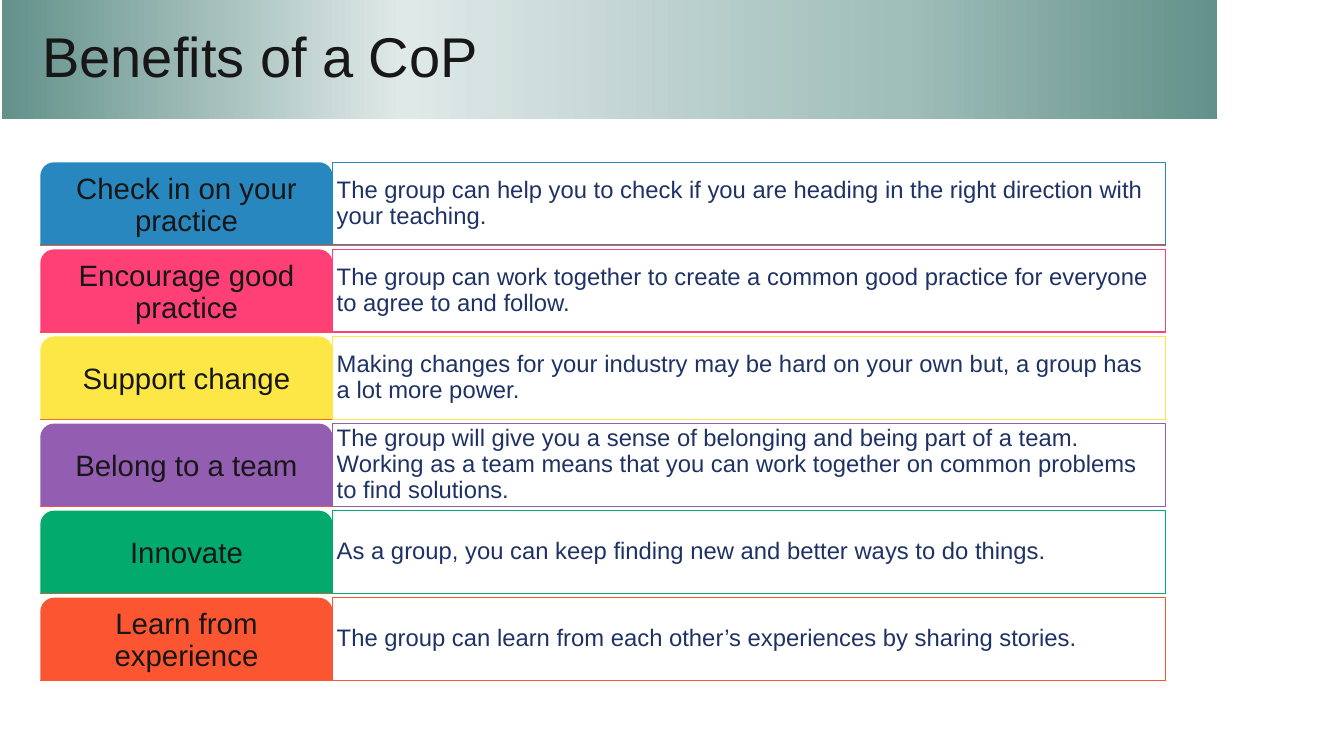
from dataclasses import dataclass
from lxml.etree import SubElement
from pptx import Presentation
from pptx.dml.color import RGBColor as Rgb
from pptx.enum.shapes import MSO_CONNECTOR as Link, MSO_SHAPE as Kind
from pptx.enum.text import MSO_ANCHOR as Anchor, PP_ALIGN as Align
from pptx.oxml.ns import qn
from pptx.util import Emu, Pt

PX = 9144  # 100 px to the inch


@dataclass(frozen=True)
class Theme:
    font: str = "Arial"
    ink: str = "171717"
    navy: str = "1E3265"
    rule: str = "FC5531"
    bar: tuple = ((0, "63918B"), (33, "DFE9E8"), (74, "A0BEBA"), (100, "63918B"))
    title: int = 40
    label: int = 21
    body: int = 17
    edge: float = 0.75
    thin: float = 0.85


LOOK = Theme()

ROWS = [
    ("Check in on your practice", "2887BF",
     "The group can help you to check if you are heading in the right direction with your teaching."),
    ("Encourage good practice", "FF4076",
     "The group can work together to create a common good practice for everyone to agree to and follow."),
    ("Support change", "FDE746",
     "Making changes for your industry may be hard on your own but, a group has a lot more power."),
    ("Belong to a team", "935DB1",
     "The group will give you a sense of belonging and being part of a team. "
     "Working as a team means that you can work together on common problems to find solutions."),
    ("Innovate", "02AA6D",
     "As a group, you can keep finding new and better ways to do things."),
    ("Learn from experience", "FC5531",
     "The group can learn from each other’s experiences by sharing stories."),
]


def px(num):
    return Emu(round(num * PX))


def apply(obj, fmt):
    for key, val in fmt.items():
        setattr(obj, key, val)


def shape(slide, kind, box, fill=None, edge=None):
    item = slide.shapes.add_shape(kind, *map(px, box))
    item.shadow.inherit = False
    if fill:
        item.fill.solid()
        item.fill.fore_color.rgb = Rgb.from_string(fill)
    else:
        item.fill.background()
    if edge:
        item.line.color.rgb = Rgb.from_string(edge)
        item.line.width = Pt(LOOK.edge)
    else:
        item.line.fill.background()
    return item


def write(item, text, size, color, align=Align.LEFT, pad=4, left=4):
    frame = item.text_frame
    apply(frame, {
        "word_wrap": True, "vertical_anchor": Anchor.MIDDLE,
        "margin_left": px(left), "margin_right": px(pad),
        "margin_top": px(pad), "margin_bottom": px(pad),
    })
    para = frame.paragraphs[0]
    apply(para, {"text": text, "alignment": align, "line_spacing": 0.9})
    apply(para.font, {"name": LOOK.font, "size": Pt(size)})
    para.font.color.rgb = Rgb.from_string(color)


def shade(item, stops):
    """Fill from left to right with any number of colour stops."""
    item.fill.gradient()
    item.fill.gradient_angle = 0
    items = item.fill._fill._gradFill.find(qn("a:gsLst"))
    for old in list(items):
        items.remove(old)
    for pos, color in stops:
        stop = SubElement(items, qn("a:gs"), pos=str(pos * 1000))
        SubElement(stop, qn("a:srgbClr"), val=color)


def header(slide, box, text):
    bar = shape(slide, Kind.RECTANGLE, box)
    shade(bar, LOOK.bar)
    write(bar, text, LOOK.title, LOOK.ink, pad=5, left=40)


def rule(slide, x, y, wide):
    line = slide.shapes.add_connector(
        Link.STRAIGHT, px(x), px(y), px(x + wide), px(y))
    line.line.color.rgb = Rgb.from_string(LOOK.rule)
    line.line.width = Pt(LOOK.thin)
    SubElement(line._element.spPr, qn("a:effectLst"))


def benefits(slide, box, rows, tab=290, tall=82):
    x, y, wide, high = box
    step = (high - tall) / (len(rows) - 1)
    tops = [y + i * step for i in range(len(rows))]
    # Rules under the rows
    for top in tops:
        rule(slide, x, top + tall, wide)
    # Outlined text and coloured tab of each row
    for top, (label, color, text) in zip(tops, rows):
        cell = shape(slide, Kind.RECTANGLE,
                     (x + tab, top, wide - tab, tall), edge=color)
        write(cell, text, LOOK.body, LOOK.navy)
        head = shape(slide, Kind.ROUND_2_SAME_RECTANGLE,
                     (x, top, tab, tall), fill=color)
        write(head, label, LOOK.label, LOOK.ink, Align.CENTER)


def main():
    deck = Presentation()
    apply(deck, {"slide_width": px(1333), "slide_height": px(750)})
    slide = deck.slides.add_slide(deck.slide_layouts[6])
    header(slide, (2, 0, 1205, 118), "Benefits of a CoP")
    benefits(slide, (40, 161, 1116, 514), ROWS)
    deck.save("out.pptx")


if __name__ == "__main__":
    main()
